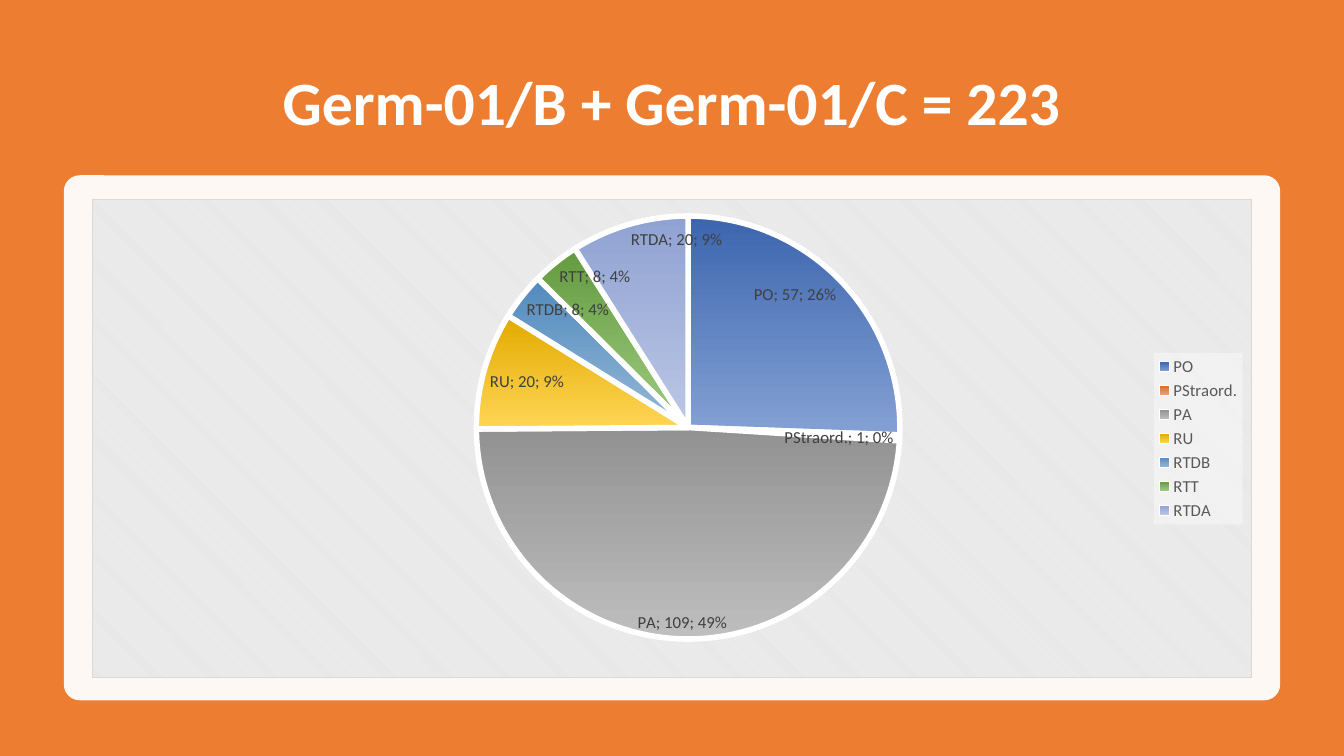
from dataclasses import dataclass

from lxml import etree
from pptx import Presentation
from pptx import util as u
from pptx.chart.data import CategoryChartData
from pptx.dml.color import RGBColor
from pptx.enum import chart as ch, shapes, text
from pptx.oxml import parse_xml
from pptx.oxml.ns import nsdecls, qn

Pt = u.Pt
FONT = "Calibri"
WHITE = RGBColor(0xFF, 0xFF, 0xFF)
BLACK = RGBColor(0, 0, 0)
ORANGE = RGBColor(0xED, 0x7D, 0x31)
LEGEND_GRAY = RGBColor(0x59, 0x59, 0x59)
LABEL_GRAY = RGBColor(0x40, 0x40, 0x40)
AREA_GRAY = RGBColor(0xE6, 0xE6, 0xE6)
BORDER_GRAY = RGBColor(0xD9, 0xD9, 0xD9)


@dataclass(frozen=True)
class Box:
    left: float
    top: float
    width: float
    height: float

    def emu(self) -> tuple:
        return tuple(Pt(v) for v in (self.left, self.top, self.width, self.height))


@dataclass(frozen=True)
class Role:
    name: str
    count: int
    top_color: RGBColor
    bottom_color: RGBColor


ROLES = [
    Role("PO", 57, RGBColor(0x3C, 0x65, 0xAE), RGBColor(0x84, 0xA1, 0xD4)),
    Role("PStraord.", 1, RGBColor(0xD2, 0x6F, 0x2B), RGBColor(0xE5, 0xA8, 0x80)),
    Role("PA", 109, RGBColor(0x92, 0x92, 0x92), RGBColor(0xBE, 0xBE, 0xBE)),
    Role("RU", 20, RGBColor(0xE2, 0xAA, 0x00), RGBColor(0xFF, 0xD5, 0x55)),
    Role("RTDB", 8, RGBColor(0x51, 0x8A, 0xBD), RGBColor(0x96, 0xB9, 0xD7)),
    Role("RTT", 8, RGBColor(0x63, 0x9A, 0x3F), RGBColor(0xA0, 0xCC, 0x82)),
    Role("RTDA", 20, RGBColor(0x90, 0xA2, 0xD3), RGBColor(0xBC, 0xC7, 0xE5)),
]

SLIDE = Box(0, 0, 960, 540)
TITLE = Box(66, 36, 828, 79.2)
PANEL = Box(45.6, 125.2, 868.8, 375)
CHART = Box(66, 142, 828, 342.6)
PLOT = {"x": 0.044, "y": 0.035, "w": 0.94, "h": 0.884}


def set_font(font, *, size: float, color: RGBColor, bold: bool = False) -> None:
    font.name, font.size, font.bold = FONT, Pt(size), bold
    font.color.rgb = color


def add_text(s, box: Box, content: str, *, size: float, color: RGBColor,
             bold: bool = False, spacing: float = 1.0) -> None:
    tf = s.shapes.add_textbox(*box.emu()).text_frame
    tf.word_wrap = True
    tf.vertical_anchor = text.MSO_ANCHOR.MIDDLE
    p = tf.paragraphs[0]
    p.alignment = text.PP_ALIGN.CENTER
    p.line_spacing = spacing
    r = p.add_run()
    r.text = content
    set_font(r.font, size=size, color=color, bold=bold)


def add_block(s, kind, box: Box, color: RGBColor):
    sp = s.shapes.add_shape(kind, *box.emu())
    sp.shadow.inherit = False
    sp.fill.solid()
    sp.fill.fore_color.rgb = color
    sp.line.fill.background()
    return sp


def set_opacity(fill_parent, percent: int) -> None:
    color = fill_parent.find(f".//{qn('a:srgbClr')}")
    etree.SubElement(color, qn("a:alpha"), val=str(percent * 1000))


def style_areas(chart) -> None:
    """Place the plot, pattern the chart area and tint the legend."""
    space = chart._chartSpace
    edges = "".join(f'<c:{k} val="{v}"/>' for k, v in PLOT.items())
    plot_area = space.chart.plotArea
    for old in plot_area.findall(qn("c:layout")):
        plot_area.remove(old)
    plot_area.insert(0, parse_xml(
        f'<c:layout {nsdecls("c")}><c:manualLayout><c:layoutTarget val="inner"/>'
        f'<c:xMode val="edge"/><c:yMode val="edge"/>{edges}</c:manualLayout></c:layout>'))
    space.chart.addnext(parse_xml(
        f'<c:spPr {nsdecls("c", "a")}><a:pattFill prst="dkDnDiag">'
        f'<a:fgClr><a:srgbClr val="{WHITE}"/></a:fgClr>'
        f'<a:bgClr><a:srgbClr val="{AREA_GRAY}"/></a:bgClr></a:pattFill>'
        f'<a:ln w="{Pt(0.75)}"><a:solidFill><a:srgbClr val="{BORDER_GRAY}"/>'
        '</a:solidFill></a:ln></c:spPr>'))
    legend_fill = parse_xml(
        f'<c:spPr {nsdecls("c", "a")}><a:solidFill><a:srgbClr val="{WHITE}"/>'
        '</a:solidFill><a:ln><a:noFill/></a:ln></c:spPr>')
    set_opacity(legend_fill, 39)
    chart.legend._element.find(qn("c:overlay")).addnext(legend_fill)


def add_role_pie(s, box: Box, roles: list[Role]) -> None:
    data = CategoryChartData()
    data.categories = [role.name for role in roles]
    data.add_series("Series 1", [role.count for role in roles])
    chart = s.shapes.add_chart(ch.XL_CHART_TYPE.PIE, *box.emu(), data).chart
    chart.has_title = False
    set_font(chart.font, size=10, color=BLACK)
    chart.has_legend = True
    chart.legend.position = ch.XL_LEGEND_POSITION.RIGHT
    chart.legend.include_in_layout = False
    set_font(chart.legend.font, size=12, color=LEGEND_GRAY)

    plot = chart.plots[0]
    plot.vary_by_categories = True
    series = plot.series[0]
    for i, role in enumerate(roles):
        fmt = series.points[i].format
        fmt.fill.gradient()
        fmt.fill.gradient_angle = 270
        for stop, color in zip(fmt.fill.gradient_stops, (role.top_color, role.bottom_color)):
            stop.color.rgb = color
        fmt.line.color.rgb = WHITE
        fmt.line.width = Pt(4)

    labels = series.data_labels
    labels.show_category_name = labels.show_value = labels.show_percentage = True
    labels.position = ch.XL_LABEL_POSITION.INSIDE_END
    set_font(labels.font, size=12, color=LABEL_GRAY)
    separator = parse_xml(f'<c:separator {nsdecls("c")}>; </c:separator>')
    labels._element.find(qn("c:showBubbleSize")).addnext(separator)
    style_areas(chart)


def main() -> None:
    prs = Presentation()
    prs.slide_width, prs.slide_height = Pt(SLIDE.width), Pt(SLIDE.height)
    s = prs.slides.add_slide(prs.slide_layouts[6])
    add_block(s, shapes.MSO_SHAPE.RECTANGLE, SLIDE, ORANGE)
    add_text(s, TITLE, "Germ-01/B + Germ-01/C = 223",
             size=44, color=WHITE, bold=True, spacing=0.9)
    panel = add_block(s, shapes.MSO_SHAPE.ROUNDED_RECTANGLE, PANEL, WHITE)
    panel.adjustments[0] = 0.03
    set_opacity(panel.fill._xPr.find(qn("a:solidFill")), 95)
    add_role_pie(s, CHART, ROLES)
    prs.save("out.pptx")


if __name__ == "__main__":
    main()
